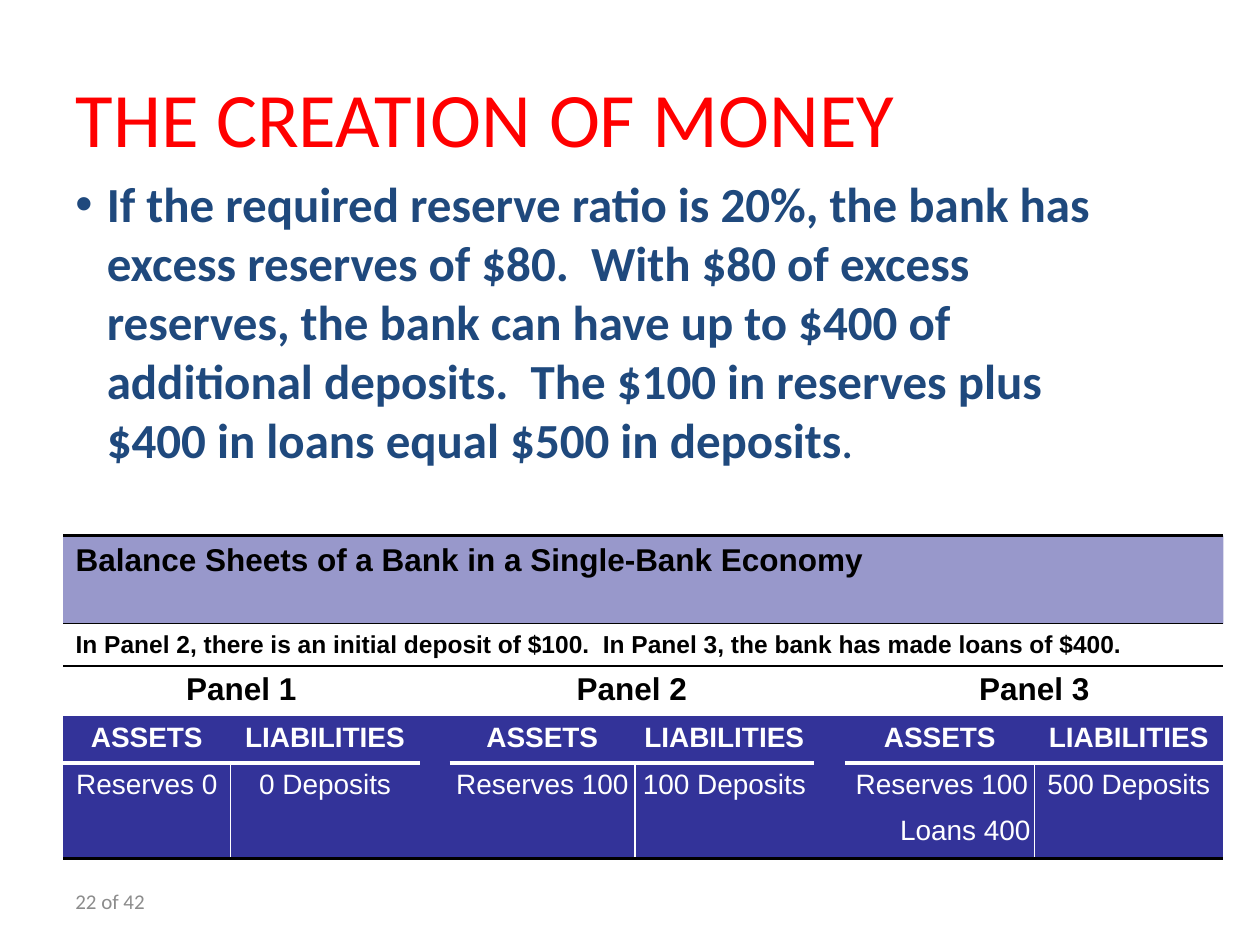
from lxml import etree
from pptx import Presentation
from pptx.dml.color import RGBColor
from pptx.enum.text import MSO_ANCHOR, PP_ALIGN
from pptx.oxml.ns import qn
from pptx.util import Inches, Pt

MIDDLE, TOP = MSO_ANCHOR.MIDDLE, MSO_ANCHOR.TOP
LEFT, CENTER, RIGHT = PP_ALIGN.LEFT, PP_ALIGN.CENTER, PP_ALIGN.RIGHT

RED = RGBColor(0xFF, 0x00, 0x00)
NAVY = RGBColor(0x1F, 0x49, 0x7D)
GRAY = RGBColor(0x8C, 0x8C, 0x8C)
BLACK = RGBColor(0x00, 0x00, 0x00)
WHITE = RGBColor(0xFF, 0xFF, 0xFF)
INDIGO = RGBColor(0x33, 0x33, 0x99)

COLUMN_WIDTHS = [1.33, 1.5, 0.23, 1.47, 1.42, 0.25, 1.5, 1.5]
ROW_HEIGHTS = [0.63, 0.33, 0.4, 0.37, 0.37, 0.39]
PANEL_COLUMNS = [0, 3, 6]
SPACER_COLUMNS = [2, 5]
HEADING_ROW, NOTE_ROW, PANEL_ROW, SIDE_ROW, FIRST_ROW, LAST_ROW = range(6)

HEADING = "Balance Sheets of a Bank in a Single-Bank Economy"
NOTE = ("In Panel 2, there is an initial deposit of $100.  "
        "In Panel 3, the bank has made loans of $400.")
ENTRIES = [("Reserves 0", "0 Deposits"),
           ("Reserves 100", "100 Deposits"),
           ("Reserves 100", "500 Deposits")]
EXPLANATION = ("If the required reserve ratio is 20%, the bank has excess reserves of $80.  "
               "With $80 of excess reserves, the bank can have up to $400 of additional deposits.  "
               "The $100 in reserves plus $400 in loans equal $500 in deposits")


def add_run(paragraph, text, size, color, font="Calibri", bold=False):
    run = paragraph.add_run()
    run.text = text
    run.font.name = font
    run.font.size = Pt(size)
    run.font.bold = bold
    run.font.color.rgb = color


def set_spacing(paragraph, before, after=None):
    properties = paragraph._p.get_or_add_pPr()
    for tag, percent in (("a:spcBef", before), ("a:spcAft", after)):
        if percent is not None:
            spacing = etree.SubElement(properties, qn(tag))
            etree.SubElement(spacing, qn("a:spcPct"), val=str(percent * 1000))


def add_bullet(paragraph, indent):
    properties = paragraph._p.get_or_add_pPr()
    properties.set("marL", str(indent))
    properties.set("indent", str(-indent))
    etree.SubElement(properties, qn("a:buFont"), typeface="Arial")
    etree.SubElement(properties, qn("a:buChar"), char="•")


def add_text_frame(slide, left, top, width, height, anchor):
    frame = slide.shapes.add_textbox(
        Inches(left), Inches(top), Inches(width), Inches(height)).text_frame
    frame.word_wrap = True
    frame.vertical_anchor = anchor
    return frame


def add_title(slide):
    title = slide.shapes.title
    title.left, title.top = Inches(0.5), Inches(0.3)
    title.width, title.height = Inches(9), Inches(1.25)
    title.text_frame.vertical_anchor = MIDDLE
    paragraph = title.text_frame.paragraphs[0]
    paragraph.alignment = LEFT
    add_run(paragraph, "THE CREATION OF MONEY", 44, RED)


def add_explanation(slide):
    paragraph = add_text_frame(slide, 0.5, 1.33, 8.5, 2.83, TOP).paragraphs[0]
    set_spacing(paragraph, 20)
    add_bullet(paragraph, Inches(0.25))
    add_run(paragraph, EXPLANATION, 28, NAVY, bold=True)
    add_run(paragraph, ".", 28, NAVY)


def add_page_number(slide):
    paragraph = add_text_frame(slide, 0.5, 6.95, 2.33, 0.4, MIDDLE).paragraphs[0]
    add_run(paragraph, "22 of 42", 12, GRAY)


def set_borders(cell, borders):
    properties = cell._tc.get_or_add_tcPr()
    for side in "LRTB":
        color, width = borders.get(side, (None, 0))
        line = etree.SubElement(properties, qn(f"a:ln{side}"), w=str(Pt(width)))
        if color is None:
            etree.SubElement(line, qn("a:noFill"))
        else:
            fill = etree.SubElement(line, qn("a:solidFill"))
            etree.SubElement(fill, qn("a:srgbClr"), val=str(color))


def fill_cell(cell, color, opacity=100):
    cell.fill.solid()
    cell.fill.fore_color.rgb = color
    if opacity < 100:
        srgb = cell._tc.tcPr.find(f"{qn('a:solidFill')}/{qn('a:srgbClr')}")
        etree.SubElement(srgb, qn("a:alpha"), val=str(opacity * 1000))


def cell_borders(row, column):
    if row <= PANEL_ROW:
        borders = {"T": (BLACK, 2.25 if row == HEADING_ROW else 1)}
        if row < PANEL_ROW:
            borders["B"] = (BLACK, 1)
        return borders
    borders = {}
    spacer = column in SPACER_COLUMNS
    if row == SIDE_ROW and not spacer:
        borders["B"] = (WHITE, 2.25)
    if row == FIRST_ROW and not spacer:
        borders["T"] = (WHITE, 2.25)
    if row == LAST_ROW:
        borders["B"] = (BLACK, 2.25)
    if row >= FIRST_ROW and not spacer:
        borders["R" if column in PANEL_COLUMNS else "L"] = (WHITE, 1)
    return borders


def write_cell(cell, text, size, color=BLACK, bold=True, align=CENTER, side_margins=(0, 0)):
    cell.margin_left, cell.margin_right = map(Inches, side_margins)
    cell.margin_top = cell.margin_bottom = Inches(0.05)
    paragraph = cell.text_frame.paragraphs[0]
    paragraph.alignment = align
    set_spacing(paragraph, 25, 45)
    add_run(paragraph, text, size, color, "Arial", bold)
    return paragraph


def style_table(table):
    table.first_row = table.horz_banding = False
    for column, width in zip(table.columns, COLUMN_WIDTHS):
        column.width = Inches(width)
    for row, height in zip(table.rows, ROW_HEIGHTS):
        row.height = Inches(height)
    for row in range(len(ROW_HEIGHTS)):
        for column in range(len(COLUMN_WIDTHS)):
            cell = table.cell(row, column)
            cell.margin_top = cell.margin_bottom = 0
            set_borders(cell, cell_borders(row, column))
            if row > PANEL_ROW:
                fill_cell(cell, INDIGO)
            else:
                fill_cell(cell, INDIGO if row == HEADING_ROW else WHITE, 50)


def add_balance_sheets(slide):
    table = slide.shapes.add_table(
        len(ROW_HEIGHTS), len(COLUMN_WIDTHS), Inches(0.5), Inches(4.25),
        Inches(sum(COLUMN_WIDTHS)), Inches(sum(ROW_HEIGHTS))).table
    style_table(table)
    wide = (0.1, 0.1)
    for row, text, size in ((HEADING_ROW, HEADING, 18), (NOTE_ROW, NOTE, 14)):
        cell = table.cell(row, 0)
        cell.merge(table.cell(row, len(COLUMN_WIDTHS) - 1))
        cell.vertical_anchor = MIDDLE
        paragraph = write_cell(cell, text, size, align=LEFT, side_margins=wide)
        if row == HEADING_ROW:
            paragraph.add_line_break()

    for number, (column, entries) in enumerate(zip(PANEL_COLUMNS, ENTRIES), 1):
        panel = table.cell(PANEL_ROW, column)
        panel.merge(table.cell(PANEL_ROW, column + 1))
        write_cell(panel, f"Panel {number}", 18, side_margins=wide)
        for offset, side in enumerate(("ASSETS", "LIABILITIES")):
            write_cell(table.cell(SIDE_ROW, column + offset), side, 16, WHITE)
            last_assets = column + offset == PANEL_COLUMNS[-1]
            write_cell(table.cell(FIRST_ROW, column + offset), entries[offset], 16, WHITE, False,
                       RIGHT if last_assets else CENTER, (0, 0.05 if last_assets else 0))
    write_cell(table.cell(LAST_ROW, PANEL_COLUMNS[-1]), "Loans 400", 16, WHITE, False,
               RIGHT, (0, 0.03))


def main():
    presentation = Presentation()
    presentation.slide_width, presentation.slide_height = Inches(10), Inches(7.5)
    slide = presentation.slides.add_slide(presentation.slide_layouts[5])
    add_title(slide)
    add_explanation(slide)
    add_balance_sheets(slide)
    add_page_number(slide)
    presentation.save("out.pptx")


if __name__ == "__main__":
    main()
